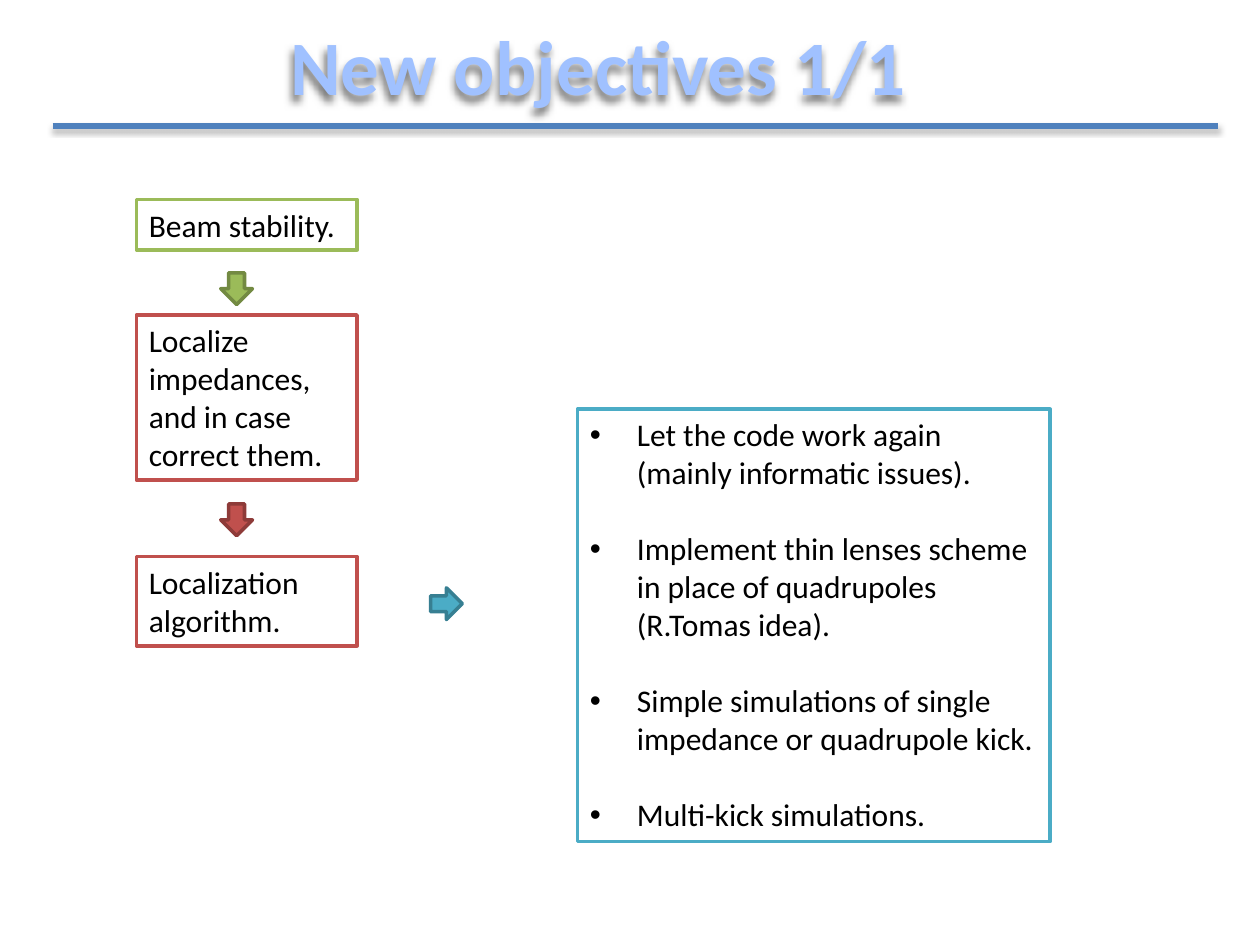
from dataclasses import dataclass

from lxml import etree
from pptx import Presentation
from pptx.dml.color import RGBColor
from pptx.enum.shapes import MSO_CONNECTOR, MSO_SHAPE
from pptx.enum.text import MSO_ANCHOR, PP_ALIGN
from pptx.oxml.ns import qn
from pptx.util import Cm, Pt

RECT = MSO_SHAPE.RECTANGLE
DOWN = MSO_SHAPE.DOWN_ARROW
LINE = MSO_CONNECTOR.STRAIGHT
TOP, MIDDLE = MSO_ANCHOR.TOP, MSO_ANCHOR.MIDDLE
LEFT, CENTER = PP_ALIGN.LEFT, PP_ALIGN.CENTER


@dataclass(frozen=True)
class Theme:
    font: str = "Calibri"
    head: int = 44
    body: int = 18
    gap: int = 22
    edge: int = 2
    title: str = "A0C1FF"
    ink: str = "000000"
    paper: str = "FFFFFF"
    rule: str = "4F81BD"
    green: str = "9BBB59"
    moss: str = "738A42"
    red: str = "C0504D"
    wine: str = "8E3B39"
    aqua: str = "4BACC6"
    teal: str = "377F92"


THEME = Theme()
STEP_X, STEP_W = 2.75, 4.45
STEPS = [
    ("Beam stability.", 4.02, 1.02, THEME.green),
    ("Localize impedances, and in case correct them.", 6.35, 3.33, THEME.red),
    ("Localization algorithm.", 11.22, 1.8, THEME.red),
]
ARROWS = [
    (4.45, 5.5, 0, THEME.green, THEME.moss),
    (4.45, 10.16, 0, THEME.red, THEME.wine),
    (8.68, 11.85, 270, THEME.aqua, THEME.teal),
]
TASKS = [
    "Let the code work again (mainly informatic issues).",
    "Implement thin lenses scheme in place of quadrupoles (R.Tomas idea).",
    "Simple simulations of single impedance or quadrupole kick.",
    "Multi-kick simulations.",
]


def color(code):
    return RGBColor.from_string(code)


def style(par, size, code, align=LEFT, bold=False):
    par.alignment = align
    par.font.name = THEME.font
    par.font.size = Pt(size)
    par.font.bold = bold
    par.font.color.rgb = color(code)


def shade(shape, blur, dist, angle, alpha):
    """Give the shape a soft black shadow; alpha is in percent."""
    props = shape._element.spPr
    effects = etree.SubElement(props, qn("a:effectLst"))
    outer = etree.SubElement(
        effects, qn("a:outerShdw"), blurRad=str(Pt(blur)),
        dist=str(Pt(dist)), dir=str(angle * 60000), rotWithShape="0")
    black = etree.SubElement(outer, qn("a:srgbClr"), val="000000")
    etree.SubElement(black, qn("a:alpha"), val=str(alpha * 1000))


def add_title(slide, text):
    box = slide.shapes.add_textbox(Cm(1.27), Cm(-0.2), Cm(21.59), Cm(3.02))
    frame = box.text_frame
    frame.word_wrap = True
    frame.vertical_anchor = MIDDLE
    frame.text = text
    style(frame.paragraphs[0], THEME.head, THEME.title, CENTER, True)
    shade(box, 4, 4, 120, 50)


def add_rule(slide):
    rule = slide.shapes.add_connector(
        LINE, Cm(1.06), Cm(2.54), Cm(24.56), Cm(2.54))
    rule.line.color.rgb = color(THEME.rule)
    rule.line.width = Pt(3)
    shade(rule, 3.1, 1.8, 90, 35)


def add_shape(slide, kind, x, y, w, h, fill, edge):
    shape = slide.shapes.add_shape(kind, Cm(x), Cm(y), Cm(w), Cm(h))
    shape.shadow.inherit = False
    shape.fill.solid()
    shape.fill.fore_color.rgb = color(fill)
    shape.line.color.rgb = color(edge)
    shape.line.width = Pt(THEME.edge)
    return shape


def add_box(slide, x, y, w, h, edge, lines):
    """Add an outlined box and return its paragraphs."""
    frame = add_shape(slide, RECT, x, y, w, h, THEME.paper, edge).text_frame
    frame.word_wrap = True
    frame.vertical_anchor = TOP
    frame.text = "\n".join(lines)
    for par in frame.paragraphs:
        style(par, THEME.body, THEME.ink)
    return frame.paragraphs


def add_bullet(par):
    props = par._p.get_or_add_pPr()
    indent = Cm(0.95)
    props.set("marL", str(indent))
    props.set("indent", str(-indent))
    font = etree.Element(qn("a:buFont"), typeface="Arial")
    mark = etree.Element(qn("a:buChar"), char="•")
    rest = props.find(qn("a:defRPr"))
    rest.addprevious(font)
    rest.addprevious(mark)


def add_tasks(slide):
    pars = add_box(slide, 11.64, 8.25, 9.53, 8.72, THEME.aqua, TASKS)
    for par in pars:
        add_bullet(par)
    for par in pars[:-1]:
        par.space_after = Pt(THEME.gap)


def main():
    deck = Presentation()
    deck.slide_width, deck.slide_height = Cm(25.4), Cm(19.05)
    slide = deck.slides.add_slide(deck.slide_layouts[6])
    add_title(slide, "New objectives 1/1")
    add_rule(slide)
    add_tasks(slide)
    for text, y, h, edge in STEPS:
        add_box(slide, STEP_X, y, STEP_W, h, edge, [text])
    for x, y, turn, fill, edge in ARROWS:
        arrow = add_shape(slide, DOWN, x, y, 0.64, 0.64, fill, edge)
        arrow.rotation = turn
    deck.save("out.pptx")


if __name__ == "__main__":
    main()
